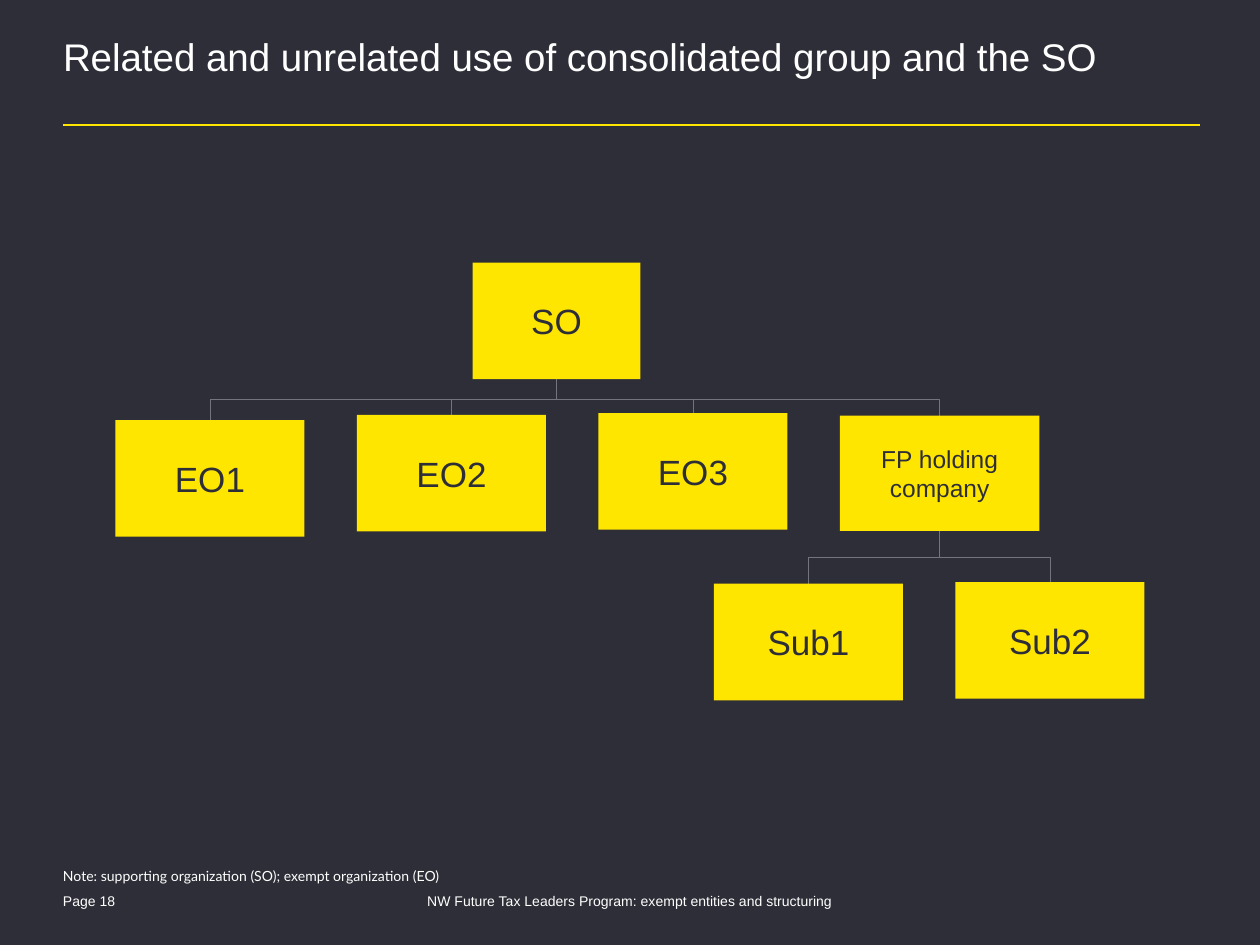
"""Build the organization chart slide on the use of a consolidated group."""
from lxml import etree
from pptx import Presentation
from pptx.dml.color import RGBColor
from pptx.enum import shapes, text
from pptx.oxml import ns
from pptx.util import Pt

DARK, YELLOW, GREY, WHITE = "2E2E38", "FFE600", "747480", "FFFFFF"
color = RGBColor.from_string


def add_line(kind, ends, hue, weight):
    line = page.shapes.add_connector(kind, *[Pt(value) for value in ends])
    line.line.color.rgb = color(hue)
    line.line.width = Pt(weight)
    etree.SubElement(line.element.spPr, ns.qn("a:effectLst"))
    return line


def set_text(shape, words, size, hue, align, font="Arial"):
    para = shape.text_frame.paragraphs[0]
    para.text = words
    para.alignment = align
    para.font.name = font
    para.font.size = Pt(size)
    para.font.color.rgb = color(hue)
    return para


deck = Presentation()
deck.slide_width, deck.slide_height = Pt(720), Pt(540)
page = deck.slides.add_slide(deck.slide_layouts[5])
page.background.fill.solid()
page.background.fill.fore_color.rgb = color(DARK)
left, center = text.PP_ALIGN.LEFT, text.PP_ALIGN.CENTER

title = page.shapes.title
title.left, title.top, title.width, title.height = Pt(36), Pt(23), Pt(648), Pt(47)
frame = title.text_frame
frame.margin_left = frame.margin_right = frame.margin_top = frame.margin_bottom = 0
frame.vertical_anchor = text.MSO_ANCHOR.TOP
frame.auto_size = text.MSO_AUTO_SIZE.NONE
heading = "Related and unrelated use of consolidated group and the SO"
set_text(title, heading, 22, WHITE, left).line_spacing = 0.85
add_line(shapes.MSO_CONNECTOR.STRAIGHT, (36, 71.4, 686, 71.4), YELLOW, 1.5)

step = 138
boxes = {
    "SO": (270, 150, 96, 66.7, 20),
    "EO1": (66, 240, 108, 66.7, 20),
    "EO2": (66 + step, 237, 108, 66.7, 20),
    "EO3": (66 + 2 * step, 236, 108, 66.7, 20),
    "FP holding company": (66 + 3 * step, 237.5, 114, 66, 14),
    "Sub1": (408, 333.5, 108, 66.7, 20),
    "Sub2": (408 + step, 332.6, 108, 66.7, 20),
}
branches = [
    ("SO", 228.2, ["EO1", "EO2", "EO3", "FP holding company"]),
    ("FP holding company", 318.6, ["Sub1", "Sub2"]),
]

for parent, bus, children in branches:
    parent_x = boxes[parent][0] + boxes[parent][2] / 2
    for child in children:
        x, y, width = boxes[child][:3]
        child_x = x + width / 2
        middle = (parent_x + child_x) / 2
        drop, run = y - bus, abs(child_x - parent_x) / 2
        side = 1 if child_x > parent_x else -1
        ends = (middle + side * drop, bus - run, middle - side * drop, bus + run)
        elbow = add_line(shapes.MSO_CONNECTOR.ELBOW, ends, GREY, 0.5)
        turn = 270 if side > 0 else 90
        elbow.element.spPr.find(ns.qn("a:xfrm")).set("rot", str(turn * 60000))

for name, (x, y, width, height, size) in boxes.items():
    box = page.shapes.add_shape(shapes.MSO_SHAPE.RECTANGLE, Pt(x), Pt(y), Pt(width), Pt(height))
    box.shadow.inherit = False
    box.fill.solid()
    box.fill.fore_color.rgb = color(YELLOW)
    box.line.fill.background()
    box.text_frame.vertical_anchor = text.MSO_ANCHOR.MIDDLE
    set_text(box, name, size, DARK, center)

notes = [
    ("Note: supporting organization (SO); exempt organization (EO)", 36, 494, 340, left, "Lato"),
    ("Page 18", 36, 508.3, 94, left, "Arial"),
    ("NW Future Tax Leaders Program: exempt entities and structuring", 201, 508.3, 318, center, "Arial"),
]
for words, x, y, width, align, font in notes:
    box = page.shapes.add_textbox(Pt(x), Pt(y), Pt(width), Pt(11))
    frame = box.text_frame
    frame.word_wrap = True
    frame.auto_size = text.MSO_AUTO_SIZE.SHAPE_TO_FIT_TEXT
    frame.margin_left = frame.margin_right = frame.margin_bottom = 0
    frame.margin_top = Pt(3)
    para = set_text(box, words, 8, WHITE, align, font)
    para.line_spacing = 0.85
    para.space_after = Pt(6)

deck.save("out.pptx")
